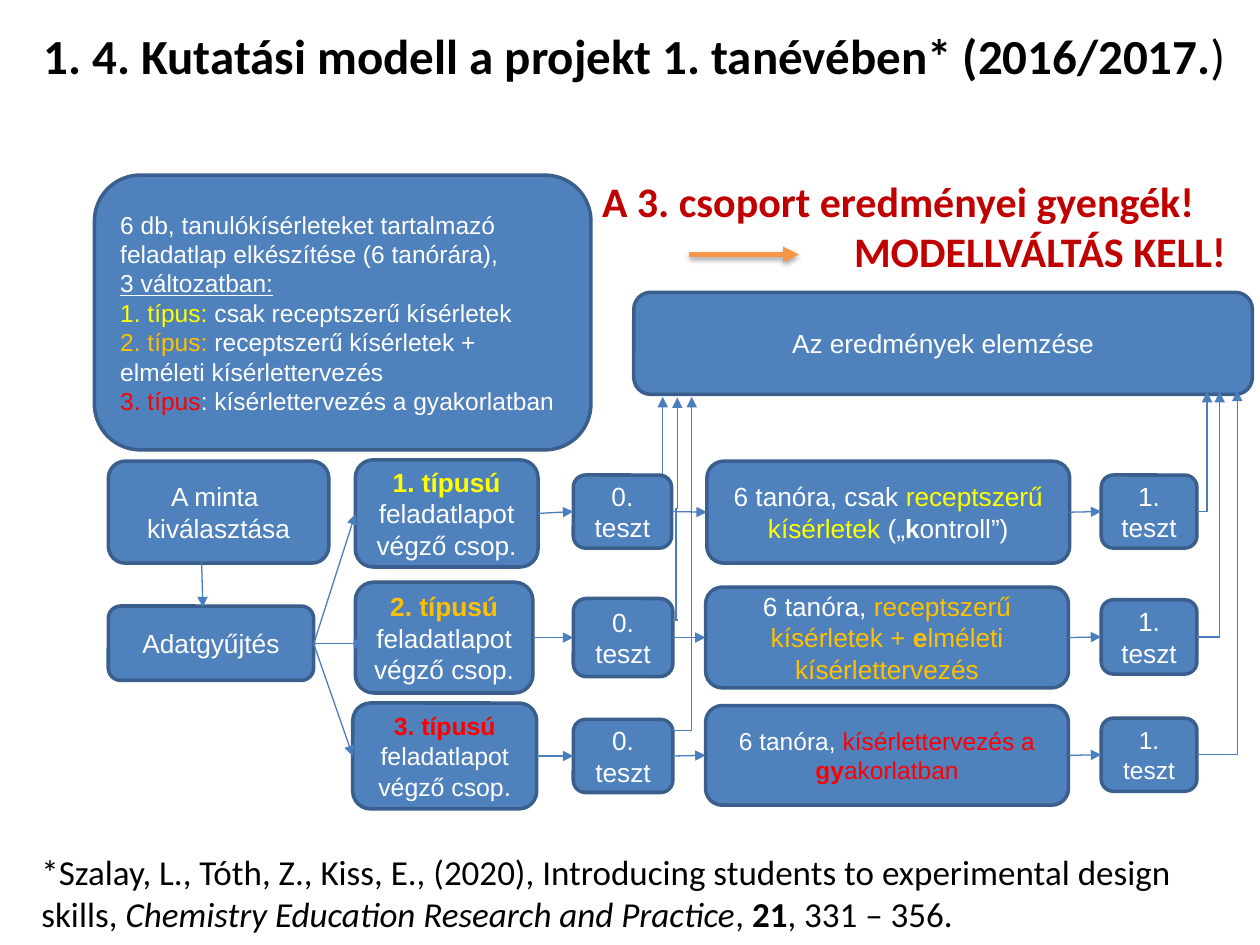
from dataclasses import dataclass

from lxml import etree
from pptx import Presentation
from pptx.dml.color import RGBColor
from pptx.enum.shapes import MSO_CONNECTOR, MSO_SHAPE
from pptx.enum.text import MSO_ANCHOR, MSO_AUTO_SIZE, PP_ALIGN
from pptx.oxml.ns import qn
from pptx.util import Inches, Pt

ROUND = MSO_SHAPE.ROUNDED_RECTANGLE
STRAIGHT, ELBOW = MSO_CONNECTOR.STRAIGHT, MSO_CONNECTOR.ELBOW
TOP, MIDDLE = MSO_ANCHOR.TOP, MSO_ANCHOR.MIDDLE
LEFT, CENTER = PP_ALIGN.LEFT, PP_ALIGN.CENTER
NO_FIT = MSO_AUTO_SIZE.NONE


@dataclass(frozen=True)
class Theme:
    fill: str = "4F81BD"
    edge: str = "3A5F8C"
    link: str = "4B7EBC"
    accent: str = "F79646"
    alert: str = "C00000"
    white: str = "FFFFFF"
    black: str = "000000"
    yellow: str = "FFFF00"
    amber: str = "FFC000"
    red: str = "FF0000"
    head: str = "Calibri"
    body: str = "Arial"
    title: float = 28
    call: float = 24
    cite: float = 20
    label: float = 15
    small: float = 14


T = Theme()


class Board:
    """Holds the theme and the slide being drawn."""

    def __init__(self, slide, theme):
        self.slide, self.theme = slide, theme

    def put(self, shape, paras, base, align=LEFT, anchor=TOP):
        """Each paragraph is a list of runs: (text, format changes)."""
        frame = shape.text_frame
        frame.word_wrap = True
        frame.auto_size = NO_FIT
        frame.vertical_anchor = anchor
        for i, runs in enumerate(paras):
            para = frame.paragraphs[0] if i == 0 else frame.add_paragraph()
            para.alignment = align
            for text, style in runs:
                run = para.add_run()
                run.text = text
                look = {**base, **style}
                run.font.color.rgb = RGBColor.from_string(look.pop("color"))
                run.font.size = Pt(look.pop("size"))
                for name, value in look.items():
                    setattr(run.font, name, value)
        return frame

    def title(self, at, paras, base):
        shape = self.slide.shapes.title
        for name, value in zip(("left", "top", "width", "height"), at):
            setattr(shape, name, Inches(value))
        self.put(shape, paras, base, CENTER)

    def text(self, at, paras, base):
        shape = self.slide.shapes.add_textbox(*map(Inches, at))
        return self.put(shape, paras, base)

    def box(self, at, paras, size=T.label, align=CENTER):
        t = self.theme
        shape = self.slide.shapes.add_shape(ROUND, *map(Inches, at))
        shape.shadow.inherit = False
        shape.fill.solid()
        shape.fill.fore_color.rgb = RGBColor.from_string(t.fill)
        shape.line.color.rgb = RGBColor.from_string(t.edge)
        shape.line.width = Pt(2)
        base = {"name": t.body, "size": size, "color": t.white}
        self.put(shape, paras, base, align, MIDDLE)

    def line(self, start, end, tip=True, color=T.link, width=0.75, kind=STRAIGHT):
        link = self.slide.shapes.add_connector(kind, *map(Inches, (*start, *end)))
        link.line.color.rgb = RGBColor.from_string(color)
        link.line.width = Pt(width)
        if tip:
            pen = link._element.spPr.find(qn("a:ln"))
            etree.SubElement(pen, qn("a:tailEnd"), type="triangle")
        etree.SubElement(link._element.spPr, qn("a:effectLst"))
        return link

    def shade(self, link):
        """Soft shadow straight below a line."""
        effects = link._element.spPr.find(qn("a:effectLst"))
        cast = etree.SubElement(effects, qn("a:outerShdw"), blurRad=str(Pt(3.1)),
                                dist=str(Pt(1.8)), dir="5400000", rotWithShape="0")
        tone = etree.SubElement(cast, qn("a:srgbClr"), val=self.theme.black)
        etree.SubElement(tone, qn("a:alpha"), val="35000")


def ink(color, **more):
    return {"color": color, **more}


def main():
    deck = Presentation()
    deck.slide_width, deck.slide_height = Inches(10), Inches(7.5)
    board = Board(deck.slides.add_slide(deck.slide_layouts[5]), T)
    plain, bold = {}, {"bold": True}

    # Title
    board.title((0.23, 0.15, 9.61, 1.04),
                [[("1. 4. Kutatási modell a projekt 1. tanévében* (2016/2017.", bold),
                  (") ", {"bold": False})]],
                {"name": T.head, "size": T.title, "color": T.black})

    # Worksheets, sample, data and results
    board.box((0.75, 1.39, 3.94, 2.18), [
        [("6 db, tanulókísérleteket tartalmazó feladatlap elkészítése (6 tanórára),", plain)],
        [("3 változatban:", {"underline": True})],
        [("1. típus: ", ink(T.yellow)), ("csak receptszerű kísérletek", plain)],
        [("2. típus: ", ink(T.amber)),
         ("receptszerű kísérletek + elméleti kísérlettervezés", plain)],
        [("3. típus", ink(T.red)), (": kísérlettervezés a gyakorlatban", plain)],
    ], T.small, LEFT)
    board.box((0.86, 3.66, 1.75, 0.81),
              [[("A minta ", plain)], [("kiválasztása", plain)]])
    board.box((0.86, 4.81, 1.63, 0.59), [[("Adatgyűjtés", plain)]])
    board.box((5.03, 2.32, 4.91, 0.81), [[("Az eredmények elemzése", plain)]])

    # One row per group: colour, group, first test, lessons, last test, sizes
    rows = [
        (T.yellow, (2.82, 3.65, 1.45, 0.85), (4.55, 3.77, 0.78, 0.58),
         (5.61, 3.66, 2.88, 0.81), (8.74, 3.77, 0.76, 0.58), T.label, T.label, T.label,
         [("6 tanóra, csak", plain), (" receptszerű kísérletek ", ink(T.yellow)),
          ("(„", plain), ("k", bold), ("ontroll”)", plain)]),
        (T.amber, (2.82, 4.62, 1.41, 0.88), (4.55, 4.75, 0.79, 0.62),
         (5.6, 4.66, 2.88, 0.8), (8.74, 4.76, 0.76, 0.59), T.label, T.label, T.label,
         [("6 tanóra, ", plain), ("receptszerű kísérletek + ", ink(T.amber)),
          ("e", ink(T.amber, bold=True)), ("lméleti kísérlettervezés", ink(T.amber))]),
        (T.red, (2.8, 5.58, 1.46, 0.84), (4.55, 5.71, 0.79, 0.58),
         (5.6, 5.6, 2.88, 0.79), (8.74, 5.7, 0.76, 0.58), 14.2, T.small, T.small,
         [("6 tanóra, ", plain), ("kísérlettervezés a ", ink(T.red)),
          ("gy", ink(T.red, bold=True)), ("akorlatban", ink(T.red))]),
    ]
    hub = (2.49, 5.11)
    entry = [(2.82, 4.08), (2.89, 5.11), (2.8, 6)]
    rise = [(9.58, 3.11), (9.68, 3.11), (9.82, 3.1)]
    for i, row in enumerate(rows):
        color, group, first, work, last, size, lesson, test, words = row
        board.box(group, [[(f"{i + 1}. típusú ", ink(color, bold=True)),
                           ("feladatlapot végző csop", plain),
                           (".", {"size": T.label})]], size)
        board.box(first, [[("0. teszt", plain)]])
        board.box(work, [words], lesson)
        board.box(last, [[("1. teszt", plain)]], test)

        # Arrows along the row, then up to the results
        board.line(hub, entry[i])
        chain = (group, first, work, last)
        mid = [at[1] + at[3] / 2 for at in chain]
        for j in range(3):
            left, top, width, height = chain[j]
            board.line((left + width, mid[j]), (chain[j + 1][0], mid[j + 1]))
        x, y = rise[i]
        board.line((last[0] + last[2], mid[3]), (x, mid[3]), tip=False)
        board.line((x, mid[3]), (x, y))

    board.line((1.6, 4.46), (1.61, 4.82))

    # First tests up to the results
    board.line((5.26, 3.76), (5.26, 3.15))
    board.line((5.38, 4.92), (5.34, 4.92), tip=False)
    bend = board.line((6.25, 4.04), (4.49, 4.03), kind=ELBOW)
    bend._element.spPr.find(qn("a:xfrm")).set("rot", "5400000")
    board.line((5.49, 5.8), (5.33, 5.8), tip=False)
    board.line((5.49, 5.8), (5.49, 3.15))

    # Source
    board.text((0.23, 6.7, 9.61, 0.77), [[
        ("*Szalay, L., Tóth, Z., Kiss, E., (2020), Introducing students to "
         "experimental design skills,", plain),
        (" Chemistry Education Research and Practice", {"italic": True}),
        (", ", plain), ("21", bold), (", 331 – 356.", plain),
    ]], {"name": T.head, "size": T.cite, "color": T.black})

    # Conclusion with its arrow
    frame = board.text((4.68, 1.34, 5.26, 0.91), [
        [("A 3. csoport eredményei gyengék!", plain)],
        [("MODELLVÁLTÁS KELL!", plain)],
    ], {"name": T.head, "size": T.call, "color": T.alert, "bold": True})
    frame.paragraphs[1]._p.get_or_add_pPr().set("marL", str(Inches(2)))
    board.shade(board.line((5.47, 2.02), (6.34, 2.02), color=T.accent, width=3))

    deck.save("out.pptx")


if __name__ == "__main__":
    main()
